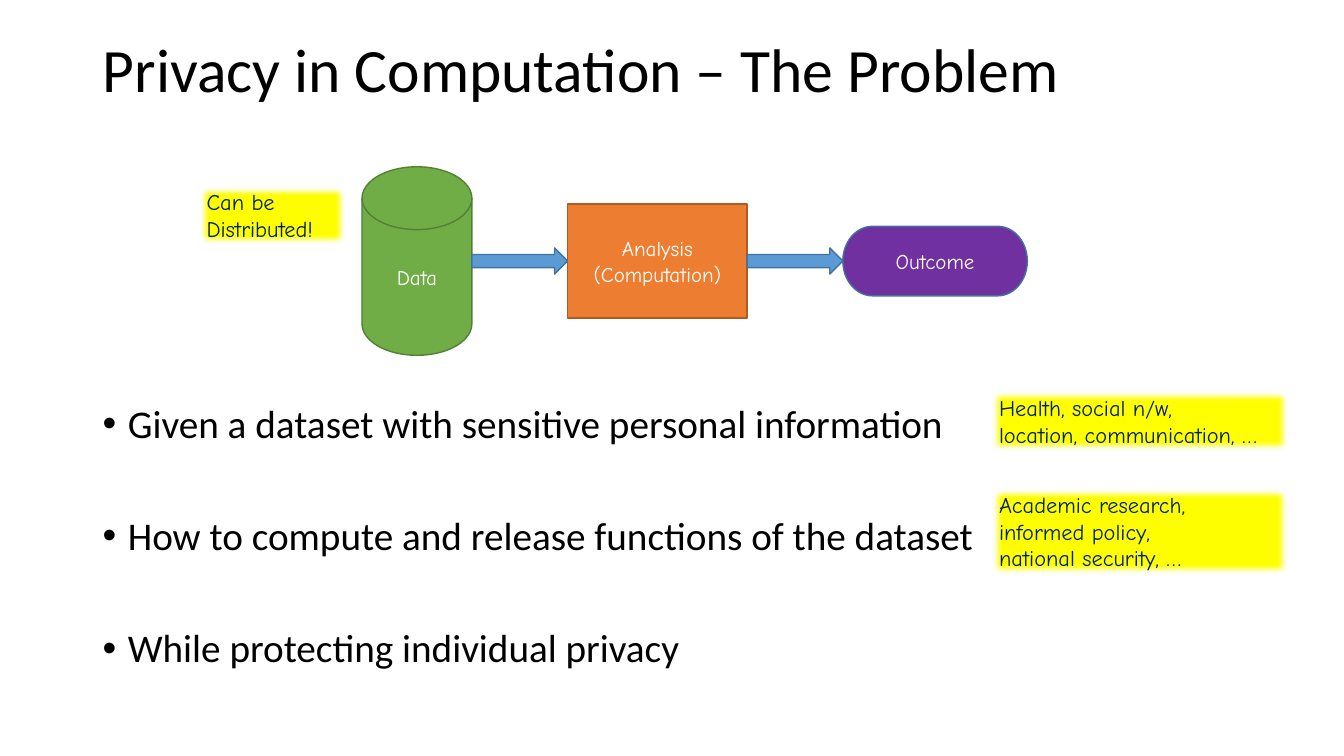
import pptx
import pptx.util
import pptx.dml.color
import pptx.enum.shapes
import pptx.enum.text
import pptx.oxml
import pptx.oxml.ns
from pptx.util import Inches

COLORS = {
    "black": "000000", "white": "FFFFFF", "navy": "002060", "yellow": "FFFF00",
    "green": "70AD47", "dark_green": "538035", "orange": "ED7D31",
    "dark_orange": "AF5C24", "purple": "7030A0", "blue": "5B9BD5",
    "dark_blue": "43739E",
}
SHAPES = pptx.enum.shapes.MSO_SHAPE
ALIGN = pptx.enum.text.PP_ALIGN
ANCHOR = pptx.enum.text.MSO_ANCHOR
AUTO_SIZE = pptx.enum.text.MSO_AUTO_SIZE
FLOW_MIDDLE = 2.59


def color(name):
    return pptx.dml.color.RGBColor.from_string(COLORS[name])


def format_text(frame, size, font, ink, align=ALIGN.LEFT):
    frame.word_wrap = True
    for paragraph in frame.paragraphs:
        paragraph.alignment = align
        for run in paragraph.runs:
            run.font.size = pptx.util.Pt(size)
            run.font.name = font
            run.font.color.rgb = color(ink)


def add_filled(shapes, kind, box, fill, line=None):
    filled = shapes.add_shape(kind, *map(Inches, box))
    filled.shadow.inherit = False
    filled.fill.solid()
    filled.fill.fore_color.rgb = color(fill)
    if line:
        filled.line.color.rgb = color(line)
        filled.line.width = pptx.util.Pt(1)
    else:
        filled.line.fill.background()
    return filled


def add_step(shapes, kind, left, width, height, fill, line, text=""):
    box = (left, FLOW_MIDDLE - height / 2, width, height)
    step = add_filled(shapes, kind, box, fill, line)
    step.text_frame.text = text
    step.text_frame.vertical_anchor = ANCHOR.MIDDLE
    format_text(step.text_frame, 15, "Comic Neue", "white", ALIGN.CENTER)


def add_note(shapes, box, text):
    note = add_filled(shapes, SHAPES.RECTANGLE, box, "yellow")
    effects = note._element.spPr.find(pptx.oxml.ns.qn("a:effectLst"))
    effects.append(pptx.oxml.parse_xml(
        f'<a:softEdge {pptx.oxml.ns.nsdecls("a")} rad="63500"/>'))
    note.text_frame.text = text
    note.text_frame.vertical_anchor = ANCHOR.TOP
    format_text(note.text_frame, 16, "Comic Neue", "navy")


def add_title(slide, text):
    title = slide.shapes.title
    title.left, title.top = Inches(0.92), Inches(-0.01)
    title.width, title.height = Inches(11.5), Inches(1.45)
    title.text_frame.text = text
    title.text_frame.auto_size = AUTO_SIZE.NONE
    title.text_frame.vertical_anchor = ANCHOR.MIDDLE
    title.text_frame.paragraphs[0].line_spacing = 0.9
    format_text(title.text_frame, 44, "Calibri", "black")


def add_bullets(shapes, box, lines):
    points = shapes.add_textbox(*map(Inches, box)).text_frame
    points.text = "\n".join(lines)
    format_text(points, 28, "Calibri", "black")
    for index, point in enumerate(points.paragraphs):
        point.line_spacing = 0.9
        point.space_before = pptx.util.Pt(50 if index else 0)
        properties = point._p.get_or_add_pPr()
        properties.set("marL", str(Inches(0.25)))
        properties.set("indent", str(Inches(-0.25)))
        for tag in ('buFont typeface="Arial"', 'buChar char="•"'):
            properties.append(pptx.oxml.parse_xml(
                f'<a:{tag} {pptx.oxml.ns.nsdecls("a")}/>'))


def main():
    deck = pptx.Presentation()
    deck.slide_width, deck.slide_height = Inches(13.33), Inches(7.5)
    slide = deck.slides.add_slide(deck.slide_layouts[5])
    add_title(slide, "Privacy in Computation – The Problem")

    flow = slide.shapes.add_group_shape().shapes
    add_step(flow, SHAPES.FLOWCHART_MAGNETIC_DISK, 3.59, 1.09, 1.87,
             "green", "dark_green", "Data")
    add_step(flow, SHAPES.FLOWCHART_PROCESS, 5.63, 1.78, 1.13,
             "orange", "dark_orange", "Analysis\n(Computation)")
    add_step(flow, SHAPES.FLOWCHART_TERMINATOR, 8.36, 1.83, 0.69,
             "purple", "dark_blue", "Outcome")
    for arrow_left in (4.68, 7.41):
        add_step(flow, SHAPES.RIGHT_ARROW, arrow_left, 0.95, 0.26,
                 "blue", "dark_blue")

    add_bullets(slide.shapes, (0.92, 3.96, 11.5, 3.21), [
        "Given a dataset with sensitive personal information",
        "How to compute and release functions of the dataset",
        "While protecting individual privacy",
    ])
    add_note(slide.shapes, (9.81, 3.86, 2.99, 0.64),
             "Health, social n/w,\nlocation, communication, …")
    add_note(slide.shapes, (9.81, 4.82, 2.99, 0.91),
             "Academic research,\ninformed policy,\nnational security, …")
    add_note(slide.shapes, (1.95, 1.82, 1.51, 0.64), "Can be\nDistributed!")
    deck.save("out.pptx")


if __name__ == "__main__":
    main()
